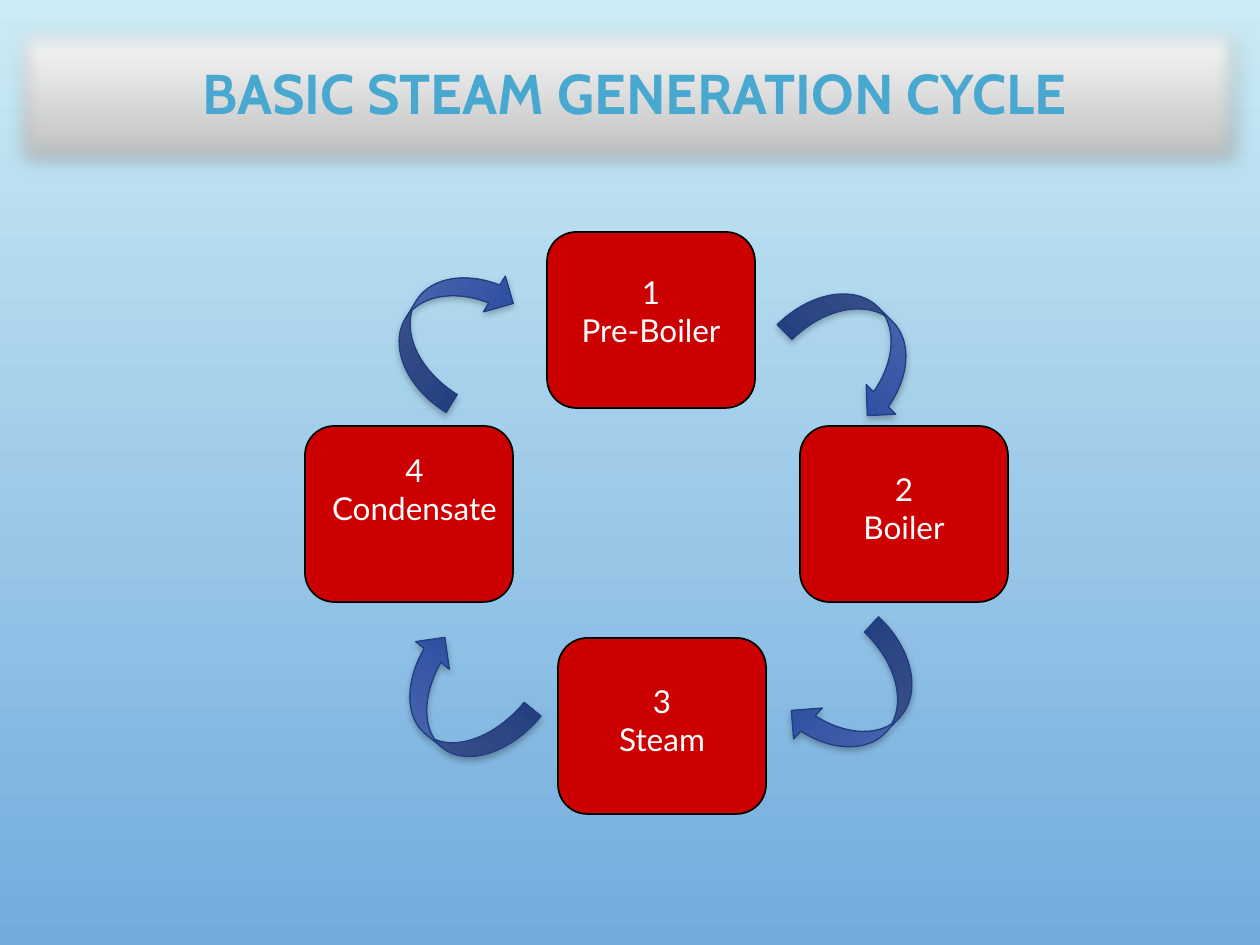
import copy
import dataclasses
import pptx
import pptx.dml.color
import pptx.enum.shapes
import pptx.enum.text
import pptx.oxml
import pptx.util

SHAPE = pptx.enum.shapes.MSO_SHAPE
ALIGN = pptx.enum.text.PP_ALIGN
ANCHOR = pptx.enum.text.MSO_ANCHOR
NS = 'xmlns:a="http://schemas.openxmlformats.org/drawingml/2006/main"'


@dataclasses.dataclass(frozen=True)
class Theme:
    sky: tuple = ("CBECF5", "73ABDD")
    bar: tuple = ("FFFFFF", "B9B9B9")
    arrow: tuple = ("5E72B3", "3A58A6", "174199")
    edge: str = "1F3F83"
    box: str = "CC0000"
    line: str = "000000"
    label: str = "FFFFFF"
    title: str = "48A8D0"
    head: str = "Cabin"
    body: str = "Lato"
    large: int = 32
    small: int = 18


THEME = Theme()


def px(*sizes):
    return [round(size * 914400 / 126) for size in sizes]


def color(code):
    return pptx.dml.color.RGBColor.from_string(code)


def blend(fill, root, codes):
    fill.gradient()
    fill.gradient_angle = 270
    stops = root.xpath(".//a:gsLst")[0]
    while len(stops) < len(codes):
        stops.append(copy.deepcopy(stops[-1]))
    for i, (stop, code) in enumerate(zip(fill.gradient_stops, codes)):
        stop.color.rgb = color(code)
        stop.position = i / (len(codes) - 1)


def outline(shape, code, width):
    shape.line.color.rgb = color(code)
    shape.line.width = pptx.util.Pt(width)


def shade(shape, alpha, blur, dist, angle, soft=0):
    shape.shadow.inherit = False
    effects = shape.element.xpath("./p:spPr/a:effectLst")[0]
    effects.append(pptx.oxml.parse_xml(
        f'<a:outerShdw {NS} blurRad="{blur * 12700}" dist="{dist * 12700}" '
        f'dir="{angle * 60000}" algn="ctr" rotWithShape="0"><a:srgbClr val="000000">'
        f'<a:alpha val="{alpha * 1000}"/></a:srgbClr></a:outerShdw>'))
    if soft:
        effects.append(pptx.oxml.parse_xml(f'<a:softEdge {NS} rad="{soft * 12700}"/>'))


def write(para, text, face, size, code, bold=False):
    para.alignment = ALIGN.CENTER
    for i, line in enumerate(text.split("\n")):
        if i:
            para.add_line_break()
        run = para.add_run()
        run.text = line
        run.font.name = face
        run.font.size = pptx.util.Pt(size)
        run.font.bold = bold
        run.font.color.rgb = color(code)


def banner(slide, area, text):
    title = slide.shapes.title
    title.left, title.top, title.width, title.height = px(*area)
    blend(title.fill, title.element, THEME.bar)
    title.line.fill.background()
    shade(title, 20, 6, 1, 45, soft=10)
    frame = title.text_frame
    frame.word_wrap = True
    frame.vertical_anchor = ANCHOR.MIDDLE
    para = frame.paragraphs[0]
    para.line_spacing = 0.9
    write(para, text, THEME.head, THEME.large, THEME.title, True)


def stage(slide, area, text, drop, extra):
    left, top, width, height = area
    group = slide.shapes.add_group_shape()
    box = group.shapes.add_shape(SHAPE.ROUNDED_RECTANGLE, *px(*area))
    box.shadow.inherit = False
    box.fill.solid()
    box.fill.fore_color.rgb = color(THEME.box)
    outline(box, THEME.line, 1)
    label = group.shapes.add_textbox(*px(left, top + drop, width + extra, 100))
    label.text_frame.word_wrap = True
    write(label.text_frame.paragraphs[0], text, THEME.body, THEME.small, THEME.label)


def arrow(slide, area, turn):
    shape = slide.shapes.add_shape(SHAPE.CURVED_DOWN_ARROW, *px(*area))
    shape.rotation = turn
    blend(shape.fill, shape.element, THEME.arrow)
    outline(shape, THEME.edge, 0.75)
    shade(shape, 28, 4, 2, 90)


def cycle(slide, area):
    x, y, width, height = area
    stages = [
        (495, 194, "2\nBoiler", 38, 0),
        (242, 0, "1\nPre-Boiler", 35, 0),
        (0, 194, "4\nCondensate", 19, 11),
        (253, 406, "3\nSteam", 38, 0),
    ]
    for dx, dy, text, drop, extra in stages:
        stage(slide, (x + dx, y + dy, 208, 176), text, drop, extra)
    arrows = [
        (480, 74, 149, 84, 45.2),
        (479, 426, 149, 84, 133),
        (79, 428, 146, 87, 219.3),
        (70, 53, 149, 84, 301.6),
    ]
    for dx, dy, wide, high, turn in arrows:
        arrow(slide, (x + dx, y + dy, wide, high), turn)


def main():
    deck = pptx.Presentation()
    deck.slide_width, deck.slide_height = px(1260, 945)
    slide = deck.slides.add_slide(deck.slide_layouts[5])
    blend(slide.background.fill, slide.element, THEME.sky)
    cycle(slide, (305, 232, 703, 582))
    banner(slide, (9, 21, 1239, 151), " BASIC STEAM GENERATION CYCLE")
    deck.save("out.pptx")


if __name__ == "__main__":
    main()
